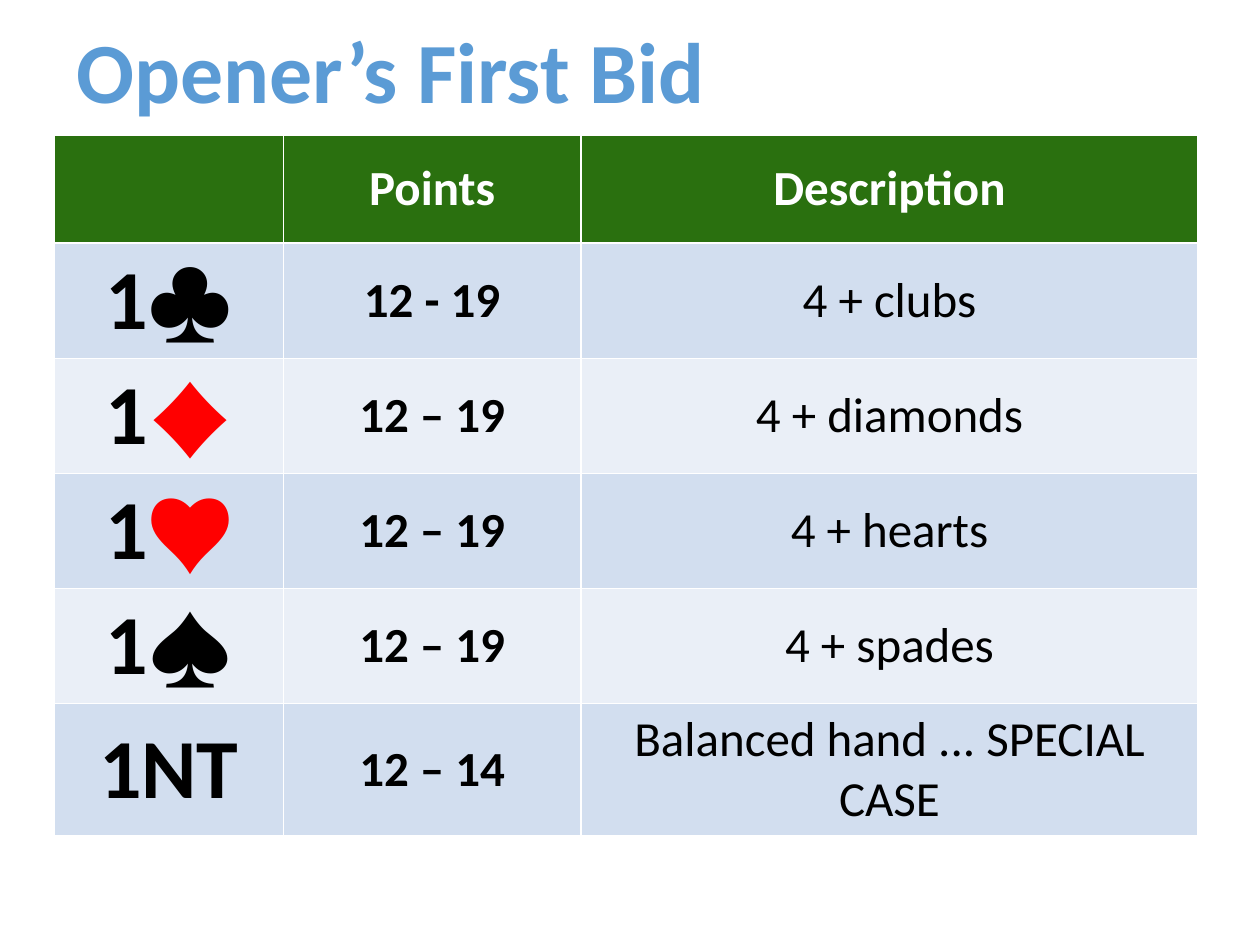
from dataclasses import dataclass

from pptx import Presentation
from pptx.dml.color import RGBColor
from pptx.enum.text import MSO_ANCHOR, PP_ALIGN
from pptx.util import Inches, Pt

MIDDLE = MSO_ANCHOR.MIDDLE
CENTER = PP_ALIGN.CENTER
FONT = "Calibri"
HEX = {
    "title": "5B9BD5",
    "head": "2A700F",
    "odd": "D2DEEF",
    "even": "EAEFF7",
    "white": "FFFFFF",
    "black": "000000",
    "red": "FF0000",
}
WIDTHS = (1.82, 2.36, 4.9)


@dataclass
class Run:
    text: str
    size: int = 28
    bold: bool = True
    color: str = "black"


@dataclass
class Bid:
    call: list[Run]
    points: str
    hand: str


def big(text: str, color: str = "black") -> Run:
    return Run(text, 48, color=color)


BIDS = [
    Bid([big("1♣")], "12 - 19", "4 + clubs"),
    Bid([big("1"), big("♦", "red")], "12 – 19", "4 + diamonds"),
    Bid([big("1"), big("♥", "red")], "12 – 19", "4 + hearts"),
    Bid([big("1♠")], "12 – 19", "4 + spades"),
    Bid([big("1NT")], "12 – 14", "Balanced hand ... SPECIAL CASE"),
]


def write(para, runs: list[Run]) -> None:
    for item in runs:
        run = para.add_run()
        run.text = item.text
        style = {"name": FONT, "size": Pt(item.size), "bold": item.bold}
        for key, value in style.items():
            setattr(run.font, key, value)
        run.font.color.rgb = RGBColor.from_string(HEX[item.color])


def draw_title(slide) -> None:
    box = slide.shapes.add_textbox(Inches(0.51), Inches(0.13), Inches(9), Inches(0.94))
    frame = box.text_frame
    for key, value in {"word_wrap": True, "vertical_anchor": MIDDLE}.items():
        setattr(frame, key, value)
    para = frame.paragraphs[0]
    para.line_spacing = 0.9
    write(para, [Run("Opener’s First Bid", 49, color="title")])


def draw_cell(cell, runs: list[Run], fill: str) -> None:
    cell.fill.solid()
    cell.fill.fore_color.rgb = RGBColor.from_string(HEX[fill])
    cell.vertical_anchor = MIDDLE
    para = cell.text_frame.paragraphs[0]
    para.alignment = CENTER
    write(para, runs)


def draw_table(slide) -> None:
    head = [[], [Run("Points", color="white")], [Run("Description", color="white")]]
    rows = [head] + [
        [bid.call, [Run(bid.points)], [Run(bid.hand, bold=False)]] for bid in BIDS
    ]
    high = Inches(5.53)
    shape = slide.shapes.add_table(
        len(rows), len(WIDTHS), Inches(0.43), Inches(1.07), Inches(sum(WIDTHS)), high
    )
    table = shape.table
    for col, width in zip(table.columns, WIDTHS):
        col.width = Inches(width)
    for row in table.rows:
        row.height = Inches(0.86)
    shape.height = high
    for r, row in enumerate(rows):
        fill = "head" if r == 0 else "odd" if r % 2 else "even"
        for c, runs in enumerate(row):
            draw_cell(table.cell(r, c), runs, fill)


def main() -> None:
    deck = Presentation()
    deck.slide_width = Inches(10)
    deck.slide_height = Inches(7.5)
    slide = deck.slides.add_slide(deck.slide_layouts[6])
    draw_table(slide)
    draw_title(slide)
    deck.save("out.pptx")


if __name__ == "__main__":
    main()
